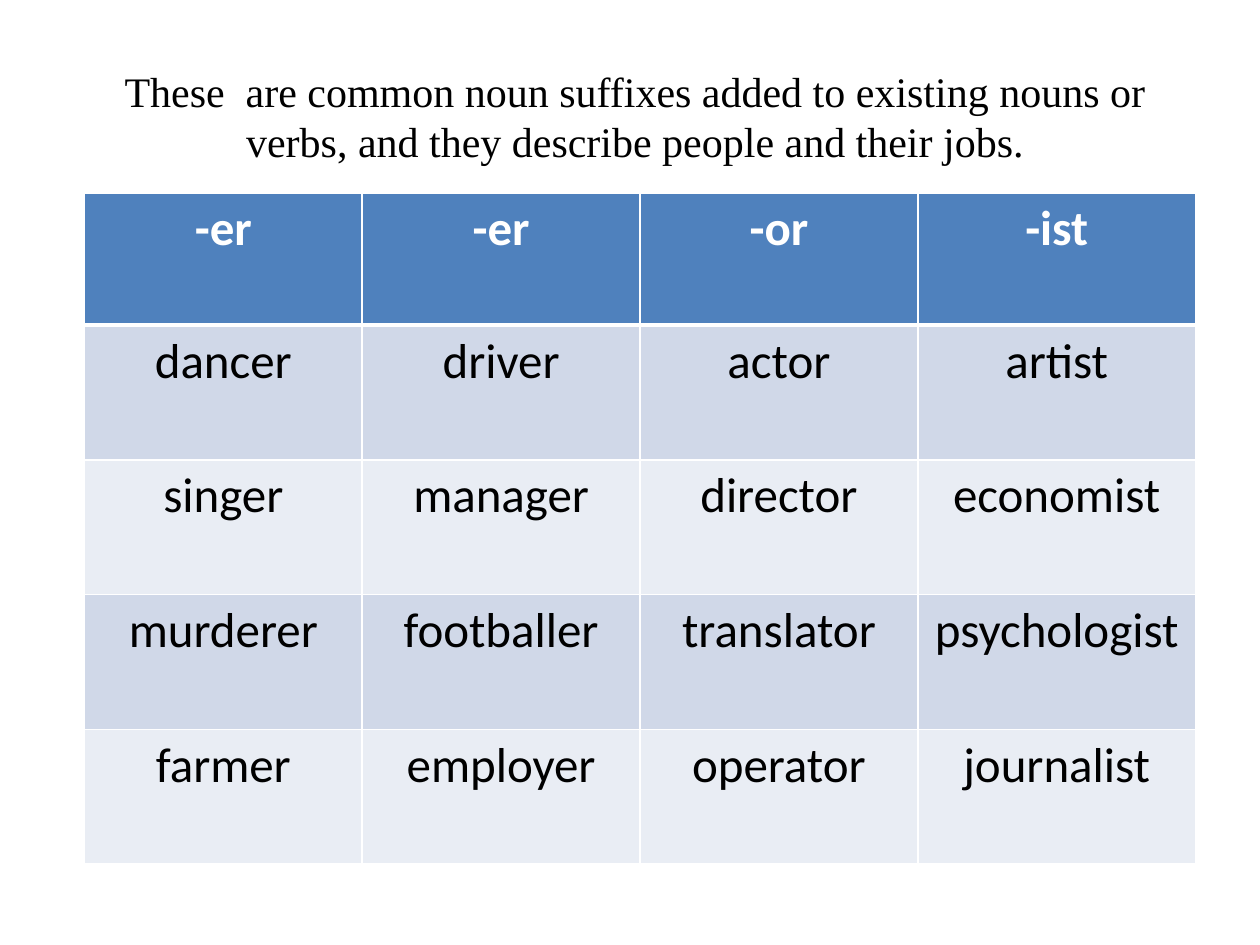
from lxml.etree import SubElement
from pptx import Presentation
from pptx.dml.color import RGBColor
from pptx.enum.text import MSO_ANCHOR, PP_ALIGN
from pptx.oxml.ns import qn
from pptx.util import Inches, Pt

WHITE, BLACK, HEADER_BLUE = "FFFFFF", "000000", "4F81BD"
BANDS = ["E9EDF4", "D0D8E8"]
SUFFIX_ROWS = [
    ["-er", "-er", "-or", "-ist"],
    ["dancer", "driver", "actor", "artist"],
    ["singer", "manager", "director", "economist"],
    ["murderer", "footballer", "translator", "psychologist"],
    ["farmer", "employer", "operator", "journalist"],
]


def add_run(paragraph, text, font, size, color, bold=False):
    paragraph.alignment = PP_ALIGN.CENTER
    run = paragraph.add_run()
    run.text = text
    run.font.name = font
    run.font.size = Pt(size)
    run.font.bold = bold
    run.font.color.rgb = RGBColor.from_string(color)


def set_cell(cell, fill, bottom_width):
    properties = cell._tc.get_or_add_tcPr()
    for side in ("lnL", "lnR", "lnT", "lnB"):
        width = bottom_width if side == "lnB" else 1
        line = SubElement(properties, qn(f"a:{side}"), w=str(Pt(width)))
        line_fill = SubElement(line, qn("a:solidFill"))
        SubElement(line_fill, qn("a:srgbClr"), val=WHITE)
    cell.fill.solid()
    cell.fill.fore_color.rgb = RGBColor.from_string(fill)


prs = Presentation()
prs.slide_width, prs.slide_height = Inches(10), Inches(7.5)
slide = prs.slides.add_slide(prs.slide_layouts[5])

# Introductory sentence
intro = slide.shapes.title
intro.left, intro.top = Inches(0.5), Inches(0.29)
intro.width, intro.height = Inches(9.08), Inches(1.26)
intro.text_frame.word_wrap = True
intro.text_frame.vertical_anchor = MSO_ANCHOR.MIDDLE
add_run(intro.text_frame.paragraphs[0],
        "These  are common noun suffixes added to existing nouns or verbs, "
        "and they describe people and their jobs.",
        "Times New Roman", 24, BLACK)

# Table of suffixes and example jobs
suffixes = slide.shapes.add_table(
    len(SUFFIX_ROWS), len(SUFFIX_ROWS[0]),
    Inches(0.67), Inches(1.53), Inches(8.82), Inches(5.33)).table
for row_index, words in enumerate(SUFFIX_ROWS):
    is_header = row_index == 0
    suffixes.rows[row_index].height = Inches(1.05 if is_header else 1.07)
    for column_index, word in enumerate(words):
        cell = suffixes.cell(row_index, column_index)
        set_cell(cell, HEADER_BLUE if is_header else BANDS[row_index % 2],
                 bottom_width=3 if is_header else 1)
        add_run(cell.text_frame.paragraphs[0], word, "Calibri", 28,
                WHITE if is_header else BLACK, bold=is_header)

prs.save("out.pptx")
